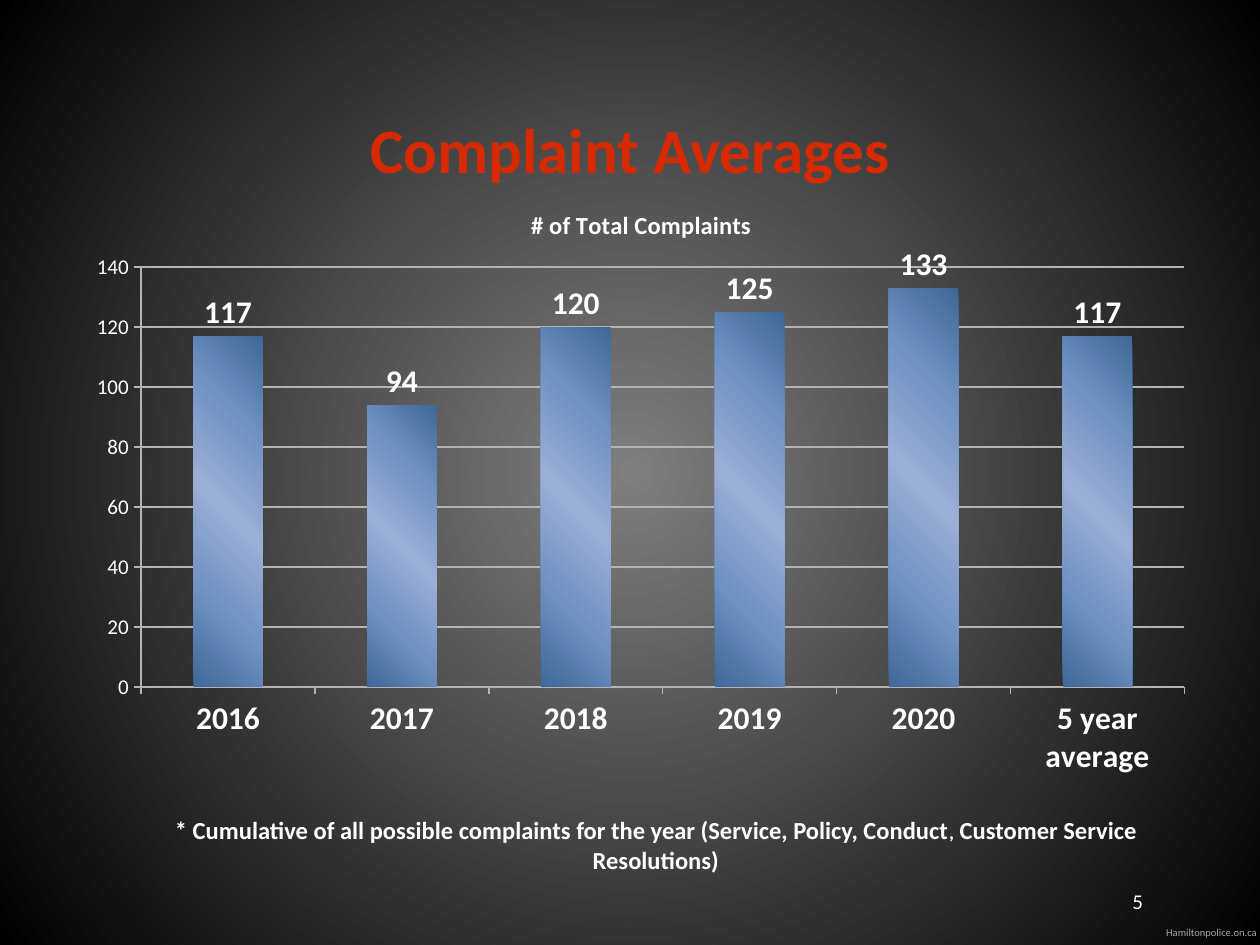
"""Build the complaint averages slide with its column chart."""
from pptx import Presentation
from pptx.chart.data import CategoryChartData
from pptx.dml.color import RGBColor
from pptx.enum.chart import XL_CHART_TYPE, XL_LABEL_POSITION, XL_TICK_MARK
from pptx.enum.text import MSO_ANCHOR, PP_ALIGN
from pptx.oxml import parse_xml
from pptx.oxml.ns import nsdecls, qn
from pptx.util import Inches, Pt

FONT = "Calibri"
WHITE = RGBColor(0xFF, 0xFF, 0xFF)
BLACK = RGBColor(0, 0, 0)
RED = RGBColor(0xD6, 0x29, 0x00)
GREY = RGBColor(0x7F, 0x7F, 0x7F)
FOOTER_GREY = RGBColor(0xA6, 0xA6, 0xA6)
GRID_GREY = RGBColor(0xB3, 0xB3, 0xB3)
DARK_BLUE = RGBColor(0x3F, 0x67, 0x97)
MID_BLUE = RGBColor(0x70, 0x92, 0xC3)
LIGHT_BLUE = RGBColor(0x9B, 0xAE, 0xD6)

RADIAL = ('<a:path path="circle"><a:fillToRect l="50000" t="50000" '
          'r="50000" b="50000"/></a:path>')
DIAGONAL = '<a:lin ang="18900000" scaled="0"/>'

COMPLAINTS = {"2016": 117, "2017": 94, "2018": 120, "2019": 125,
              "2020": 133, "5 year average": 117}


def format_font(font, size, color=WHITE, bold=False):
    font.name, font.size, font.bold = FONT, Pt(size), bold
    font.color.rgb = color


def set_gradient(fill, owner, colors, shading):
    """Fill with evenly spaced colours, shaded radially or along a line."""
    fill.gradient()
    step = 100000 // (len(colors) - 1)
    stops = "".join(f'<a:gs pos="{i * step}"><a:srgbClr val="{color}"/></a:gs>'
                    for i, color in enumerate(colors))
    default = next(owner.iter(qn("a:gradFill")))
    default.getparent().replace(default, parse_xml(
        f'<a:gradFill {nsdecls("a")} rotWithShape="1">'
        f'<a:gsLst>{stops}</a:gsLst>{shading}</a:gradFill>'))


def write_text(shape, *runs, align=PP_ALIGN.CENTER, anchor=MSO_ANCHOR.TOP,
               wrap=True, margin=None, **font_format):
    """Write (text, size) runs as one paragraph."""
    frame = shape.text_frame
    frame.word_wrap, frame.vertical_anchor = wrap, anchor
    if margin is not None:
        frame.margin_left = frame.margin_right = margin
        frame.margin_top = frame.margin_bottom = margin
    paragraph = frame.paragraphs[0]
    paragraph.alignment = align
    for text, size in runs:
        run = paragraph.add_run()
        run.text = text
        format_font(run.font, size, **font_format)


def add_text(slide, box, *runs, **text_format):
    write_text(slide.shapes.add_textbox(*map(Inches, box)), *runs, **text_format)


def add_title(slide, text):
    title = slide.shapes.title
    title.left, title.top = Inches(0.5), Inches(0.83)
    title.width, title.height = Inches(9), Inches(1.25)
    write_text(title, (text, 36), color=RED, bold=True)


def place(element, target="", **fractions):
    """Fix a chart part at fractions of the chart area."""
    layout = element.get_or_add_layout() if hasattr(
        element, "get_or_add_layout") else element.find(qn("c:layout"))
    if layout is None:
        layout = parse_xml(f'<c:layout {nsdecls("c")}/>')
        element.insert(0, layout)
    modes = '<c:xMode val="edge"/><c:yMode val="edge"/>'
    values = "".join(f'<c:{key} val="{value}"/>' for key, value in fractions.items())
    layout.append(parse_xml(f'<c:manualLayout {nsdecls("c")}>{target}{modes}'
                            f'{values}</c:manualLayout>'))


def format_axis(axis, size, bold=False):
    axis.major_tick_mark = XL_TICK_MARK.OUTSIDE
    axis.minor_tick_mark = XL_TICK_MARK.NONE
    axis.format.line.color.rgb = GRID_GREY
    axis.format.line.width = Pt(0.75)
    format_font(axis.tick_labels.font, size, bold=bold)


def add_complaint_chart(slide):
    data = CategoryChartData()
    data.categories = list(COMPLAINTS)
    data.add_series("Series 1", list(COMPLAINTS.values()))
    chart = slide.shapes.add_chart(
        XL_CHART_TYPE.COLUMN_CLUSTERED, Inches(0.58), Inches(1.42),
        Inches(9), Inches(4.83), data).chart
    format_font(chart.font, 12)
    chart.has_legend = False

    chart.has_title = True
    heading = chart.chart_title.text_frame.paragraphs[0].add_run()
    heading.text = "# of Total Complaints"
    format_font(heading.font, 14, bold=True)
    chart.chart_title.include_in_layout = False
    place(chart.chart_title.element, x=0.4, y=0.04)
    plot_area = next(chart.element.iter(qn("c:plotArea")))
    place(plot_area, '<c:layoutTarget val="inner"/>', x=0.06, y=0.145, w=0.92, h=0.69)

    format_axis(chart.category_axis, 18, bold=True)
    counts = chart.value_axis
    format_axis(counts, 12)
    counts.minimum_scale, counts.maximum_scale, counts.major_unit = 0, 140, 20
    counts.has_major_gridlines = True
    counts.major_gridlines.format.line.color.rgb = GRID_GREY
    counts.major_gridlines.format.line.width = Pt(0.75)

    plot = chart.plots[0]
    plot.gap_width, plot.vary_by_categories = 150, False
    bars = plot.series[0]
    set_gradient(bars.format.fill, chart.element,
                 [DARK_BLUE, MID_BLUE, LIGHT_BLUE, MID_BLUE, DARK_BLUE], DIAGONAL)
    labels = bars.data_labels
    labels.show_value, labels.position = True, XL_LABEL_POSITION.OUTSIDE_END
    format_font(labels.font, 18, bold=True)


def main():
    deck = Presentation()
    deck.slide_width, deck.slide_height = Inches(10), Inches(7.5)
    slide = deck.slides.add_slide(deck.slide_layouts[5])
    set_gradient(slide.background.fill, slide.element, [GREY, BLACK], RADIAL)
    add_text(slide, (9.23, 7.35, 0.77, 0.1), ("Hamiltonpolice.on.ca", 6),
             color=FOOTER_GREY, wrap=False, margin=0)
    add_title(slide, "Complaint Averages")
    add_complaint_chart(slide)
    add_text(slide, (7.17, 6.95, 2, 0.4), ("5", 12),
             align=PP_ALIGN.RIGHT, anchor=MSO_ANCHOR.MIDDLE)
    add_text(slide, (0.83, 6.42, 8.75, 0.34),
             ("* Cumulative of all possible complaints for the year "
              "(Service, Policy, Conduct", 14),
             (",", 11), (" Customer Service Resolutions)", 14), bold=True)
    deck.save("out.pptx")


if __name__ == "__main__":
    main()
